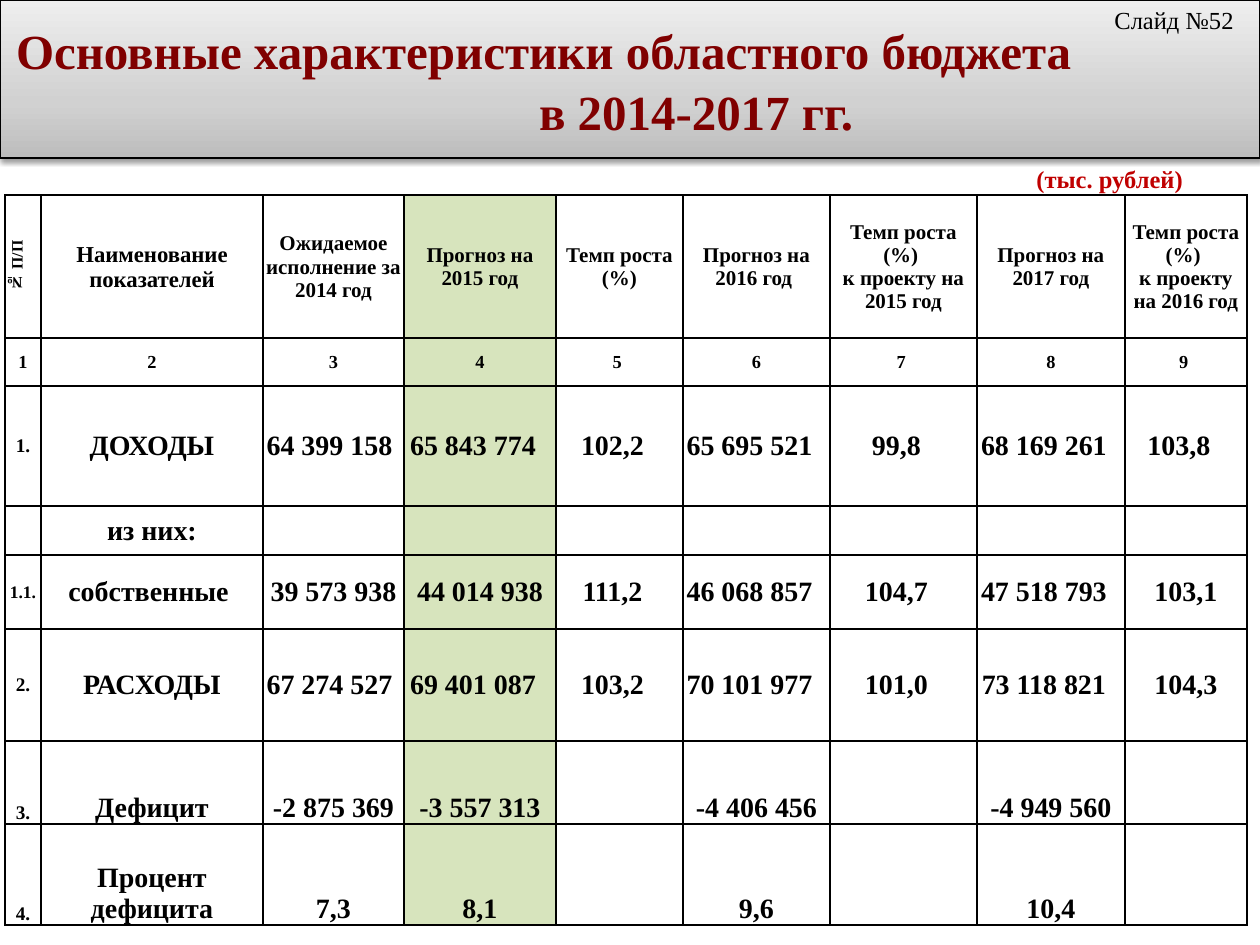
from pptx import Presentation
from pptx.dml.color import RGBColor
from pptx.enum.text import MSO_ANCHOR, MSO_AUTO_SIZE, PP_ALIGN
from pptx.oxml import parse_xml
from pptx.oxml.ns import nsdecls
from pptx.util import Emu, Pt

FONT = "Times New Roman"
BLACK, MAROON, RED, GREEN = "000000", "800000", "C00000", "D7E4BD"
COLS = [36, 222, 141, 152, 127, 147, 147, 148, 122]
ROWS = [143, 48, 120, 49, 74, 112, 83, 101]
MARKS = [9, 10.5, 11, 11, 10, 11, 11, 11]
PADS = {2: range(2, 9), 4: range(4, 8), 5: range(2, 8)}
DATA = [
    ["№ П/П", "Наименование показателей", "Ожидаемое исполнение за 2014 год",
     "Прогноз на 2015 год", "Темп роста (%)", "Прогноз на 2016 год ",
     "Темп роста (%) \nк проекту на 2015 год", "Прогноз на 2017 год",
     "Темп роста (%) \nк проекту на 2016 год"],
    ["1", "2", "3", "4", "5 ", "6", "7 ", "8", "9 "],
    ["1.", "ДОХОДЫ", "64 399 158", "65 843 774", "102,2", "65 695 521",
     "99,8", "68 169 261", "103,8"],
    ["", "из них:", "", "", "", "", "", "", ""],
    ["1.1.", "собственные ", "39 573 938", "44 014 938", "111,2",
     "46 068 857", "104,7", "47 518 793", "103,1"],
    ["2.", "РАСХОДЫ", "67 274 527", "69 401 087", "103,2", "70 101 977",
     "101,0", "73 118 821", "104,3"],
    ["3.", "Дефицит", "-2 875 369", "-3 557 313", "", "-4 406 456", "",
     "-4 949 560", ""],
    ["4.", "Процент дефицита", "7,3", "8,1", "", "9,6", "", "10,4", ""],
]


def px(n):
    """Turn pixels into EMU."""
    return Emu(round(n * 914400 / 126))


def tint(code):
    """Turn a hex string into a colour."""
    return RGBColor.from_string(code)


def write(para, text, size, color=BLACK, bold=True):
    """Add one run to a paragraph."""
    run = para.add_run()
    run.text = text
    font = run.font
    font.name, font.size, font.bold = FONT, Pt(size), bold
    font.color.rgb = tint(color)


def place(shape, box):
    """Move a shape into a box."""
    shape.left, shape.top, shape.width, shape.height = map(px, box)


def head(slide, box):
    """Format the title as a grey banner with a soft shadow."""
    title = slide.shapes.title
    place(title, box)
    props = title._element.spPr
    stops = "".join(
        f'<a:gs pos="{pos}000"><a:srgbClr val="{code}"/></a:gs>'
        for pos, code in [(0, "BDBDBD"), (35, "D1D1D1"), (100, "EEEEEE")])
    props.append(parse_xml(
        f'<a:gradFill {nsdecls("a")} rotWithShape="1"><a:gsLst>{stops}</a:gsLst>'
        '<a:lin ang="16200000" scaled="0"/></a:gradFill>'))
    title.line.color.rgb = tint(BLACK)
    title.line.width = Pt(0.75)
    props.append(parse_xml(
        f'<a:effectLst {nsdecls("a")}><a:outerShdw blurRad="{Pt(3.1)}" '
        f'dist="{Pt(1.6)}" dir="5400000" rotWithShape="0"><a:srgbClr val="{BLACK}">'
        '<a:alpha val="38000"/></a:srgbClr></a:outerShdw></a:effectLst>'))
    frame = title.text_frame
    frame.word_wrap = True
    frame.auto_size = MSO_AUTO_SIZE.NONE
    frame.vertical_anchor = MSO_ANCHOR.MIDDLE
    frame.margin_left = px(16)
    lines = [("Основные характеристики областного бюджета", 0),
             ("в 2014-2017 гг.", 523)]
    for i, (text, left) in enumerate(lines):
        para = frame.add_paragraph() if i else frame.paragraphs[0]
        para.alignment = PP_ALIGN.LEFT
        para.line_spacing = 1.05
        para._p.get_or_add_pPr().set("marL", str(px(left)))
        write(para, text, 28, MAROON)


def label(slide, box, text, color, bold):
    """Add a one-line text box."""
    shape = slide.shapes.add_textbox(*map(px, box))
    shape.text_frame.word_wrap = True
    write(shape.text_frame.paragraphs[0], text, 14, color, bold)


def edge(cell):
    """Draw black borders round a cell."""
    props = cell._tc.get_or_add_tcPr()
    for i, side in enumerate("LRTB"):
        props.insert(i, parse_xml(
            f'<a:ln{side} {nsdecls("a")} w="{Pt(1)}"><a:solidFill>'
            f'<a:srgbClr val="{BLACK}"/></a:solidFill></a:ln{side}>'))


def pick(row, col):
    """Choose the text size for a cell."""
    if col == 0:
        return MARKS[row]
    if row == 0:
        return 13 if col == 1 else 12
    return 10.5 if row == 1 else 16


def fill(cell, row, col):
    """Format one cell and write its text."""
    cell.margin_left = cell.margin_right = cell.margin_top = px(1)
    cell.margin_bottom = 0
    if col in PADS.get(row, ()):
        cell.margin_right = px(9 if col == 2 else 15)
    cell.vertical_anchor = MSO_ANCHOR.BOTTOM if row > 5 else MSO_ANCHOR.MIDDLE
    if col == 3:
        cell.fill.solid()
        cell.fill.fore_color.rgb = tint(GREEN)
    else:
        cell.fill.background()
    edge(cell)
    frame = cell.text_frame
    for i, text in enumerate(DATA[row][col].split("\n")):
        para = frame.add_paragraph() if i else frame.paragraphs[0]
        para.alignment = PP_ALIGN.CENTER
        if text:
            write(para, text, pick(row, col))


def grid(slide, left, top):
    """Build the budget table."""
    box = (left, top, sum(COLS), sum(ROWS))
    table = slide.shapes.add_table(len(ROWS), len(COLS), *map(px, box)).table
    table.first_row = table.horz_banding = False
    for col, wide in zip(table.columns, COLS):
        col.width = px(wide)
    for row, high in zip(table.rows, ROWS):
        row.height = px(high)
    for r in range(len(ROWS)):
        for c in range(len(COLS)):
            fill(table.cell(r, c), r, c)
    table.cell(0, 0)._tc.tcPr.set("vert", "vert270")


def main():
    """Build and save the slide."""
    deck = Presentation()
    deck.slide_width, deck.slide_height = px(1260), px(945)
    slide = deck.slides.add_slide(deck.slide_layouts[5])
    head(slide, (0, 0, 1260, 158))
    label(slide, (1024, 158, 278, 42), "(тыс. рублей)", RED, True)
    grid(slide, 5, 195)
    label(slide, (1102, -1, 223, 43), "Слайд №52", BLACK, False)
    deck.save("out.pptx")


if __name__ == "__main__":
    main()
